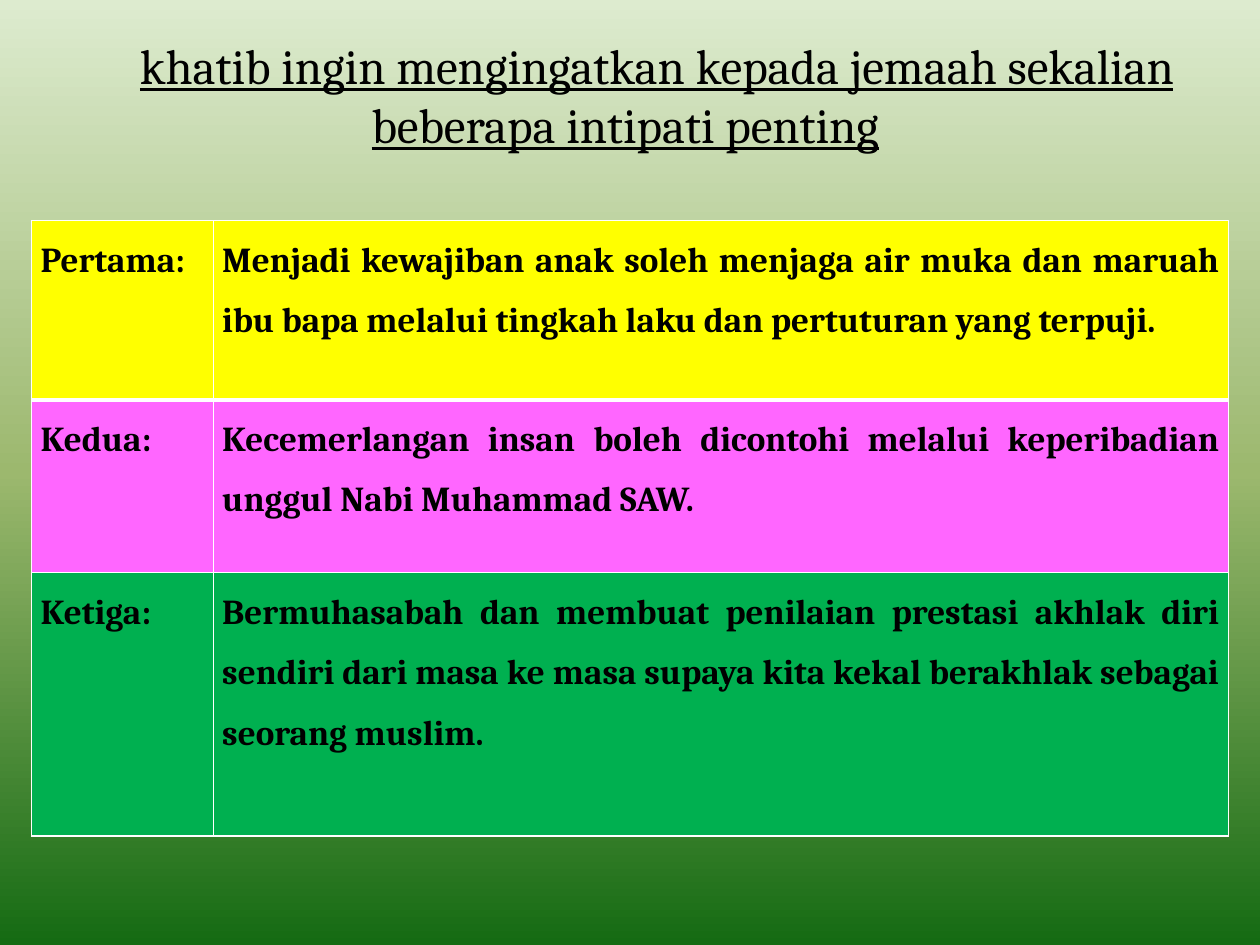
import copy
from dataclasses import dataclass

import pptx
import pptx.dml.color
import pptx.enum.text
import pptx.oxml
import pptx.oxml.ns
import pptx.slide
import pptx.table
import pptx.text.text
import pptx.util

Cm = pptx.util.Cm
Pt = pptx.util.Pt
RGB = pptx.dml.color.RGBColor
Align = pptx.enum.text.PP_ALIGN
Anchor = pptx.enum.text.MSO_ANCHOR
qn = pptx.oxml.ns.qn

FONT = "Cambria"
BLACK = RGB(0x00, 0x00, 0x00)
WHITE = RGB(0xFF, 0xFF, 0xFF)
YELLOW = RGB(0xFF, 0xFF, 0x00)
PINK = RGB(0xFF, 0x66, 0xFF)
GREEN = RGB(0x00, 0xB0, 0x50)
PALE = RGB(0xDD, 0xEB, 0xCF)
MOSS = RGB(0x9C, 0xB8, 0x6E)
DARK = RGB(0x15, 0x6B, 0x13)


@dataclass
class Point:
    label: str
    text: str
    fill: RGB
    height: float


POINTS = [
    Point("Pertama:", "Menjadi kewajiban anak soleh menjaga air muka dan maruah "
          "ibu bapa melalui tingkah laku dan pertuturan yang terpuji.", YELLOW, 3.61),
    Point("Kedua:", "Kecemerlangan insan boleh dicontohi melalui keperibadian "
          "unggul Nabi Muhammad SAW.", PINK, 3.48),
    Point("Ketiga:", "Bermuhasabah dan membuat penilaian prestasi akhlak diri "
          "sendiri dari masa ke masa supaya kita kekal berakhlak sebagai "
          "seorang muslim.", GREEN, 5.31),
]
WIDTHS = [3.66, 20.47]


def paint(slide: pptx.slide.Slide) -> None:
    """Fill the background with three colours from top to bottom."""
    fill = slide.background.fill
    fill.gradient()
    fill.gradient_angle = 270
    stops = slide.element.find(".//" + qn("a:gsLst"))
    stops.insert(1, copy.deepcopy(stops[0]))
    for stop, color, place in zip(fill.gradient_stops, (PALE, MOSS, DARK), (0, 0.5, 1)):
        stop.color.rgb = color
        stop.position = place


def style(para: pptx.text.text._Paragraph, size: int) -> pptx.text.text.Font:
    font = para.runs[0].font
    font.name = FONT
    font.size = Pt(size)
    font.color.rgb = BLACK
    return font


def border(cell: pptx.table._Cell, top: float, bottom: float) -> None:
    """Draw white edges; they stand ahead of the fill in the cell's XML."""
    edges = {"L": 1, "R": 1, "T": top, "B": bottom}
    props = cell._tc.get_or_add_tcPr()
    for spot, (side, width) in enumerate(edges.items()):
        line = pptx.oxml.parse_xml(
            f'<a:ln{side} {pptx.oxml.ns.nsdecls("a")} w="{Pt(width)}">'
            f'<a:solidFill><a:srgbClr val="{WHITE}"/></a:solidFill></a:ln{side}>')
        props.insert(spot, line)


def write(cell: pptx.table._Cell, text: str, fill: RGB) -> None:
    cell.fill.solid()
    cell.fill.fore_color.rgb = fill
    cell.margin_left = cell.margin_right = Cm(0.18)
    cell.margin_top = cell.margin_bottom = 0
    para = cell.text_frame.paragraphs[0]
    para.text = text
    para.alignment = Align.JUSTIFY
    para.line_spacing = 1.5
    style(para, 20).bold = True


def head(slide: pptx.slide.Slide, text: str) -> None:
    title = slide.shapes.title
    title.left, title.top = Cm(0.64), Cm(0.58)
    title.width, title.height = Cm(23.93), Cm(2.64)
    frame = title.text_frame
    frame.text = text
    frame.word_wrap = True
    frame.vertical_anchor = Anchor.MIDDLE
    para = frame.paragraphs[0]
    para.alignment = Align.CENTER
    para._p.get_or_add_pPr().set("indent", str(Cm(1.27)))
    style(para, 28).underline = True


def grid(slide: pptx.slide.Slide, points: list[Point]) -> None:
    high = sum(point.height for point in points)
    table = slide.shapes.add_table(
        len(points), len(WIDTHS), Cm(0.64), Cm(4.45), Cm(sum(WIDTHS)), Cm(high)).table
    for col, width in zip(table.columns, WIDTHS):
        col.width = Cm(width)
    for row, (line, point) in enumerate(zip(table.rows, points)):
        line.height = Cm(point.height)
        for cell, text in zip(line.cells, (point.label, point.text)):
            write(cell, text, point.fill)
            # A thicker rule parts the first row from the rest
            border(cell, 3 if row == 1 else 1, 3 if row == 0 else 1)


def main() -> None:
    deck = pptx.Presentation()
    deck.slide_width, deck.slide_height = Cm(25.4), Cm(19.05)
    slide = deck.slides.add_slide(deck.slide_layouts[5])
    paint(slide)
    grid(slide, POINTS)
    head(slide, "khatib ingin mengingatkan kepada jemaah sekalian "
                "beberapa intipati penting")
    deck.save("out.pptx")


if __name__ == "__main__":
    main()
